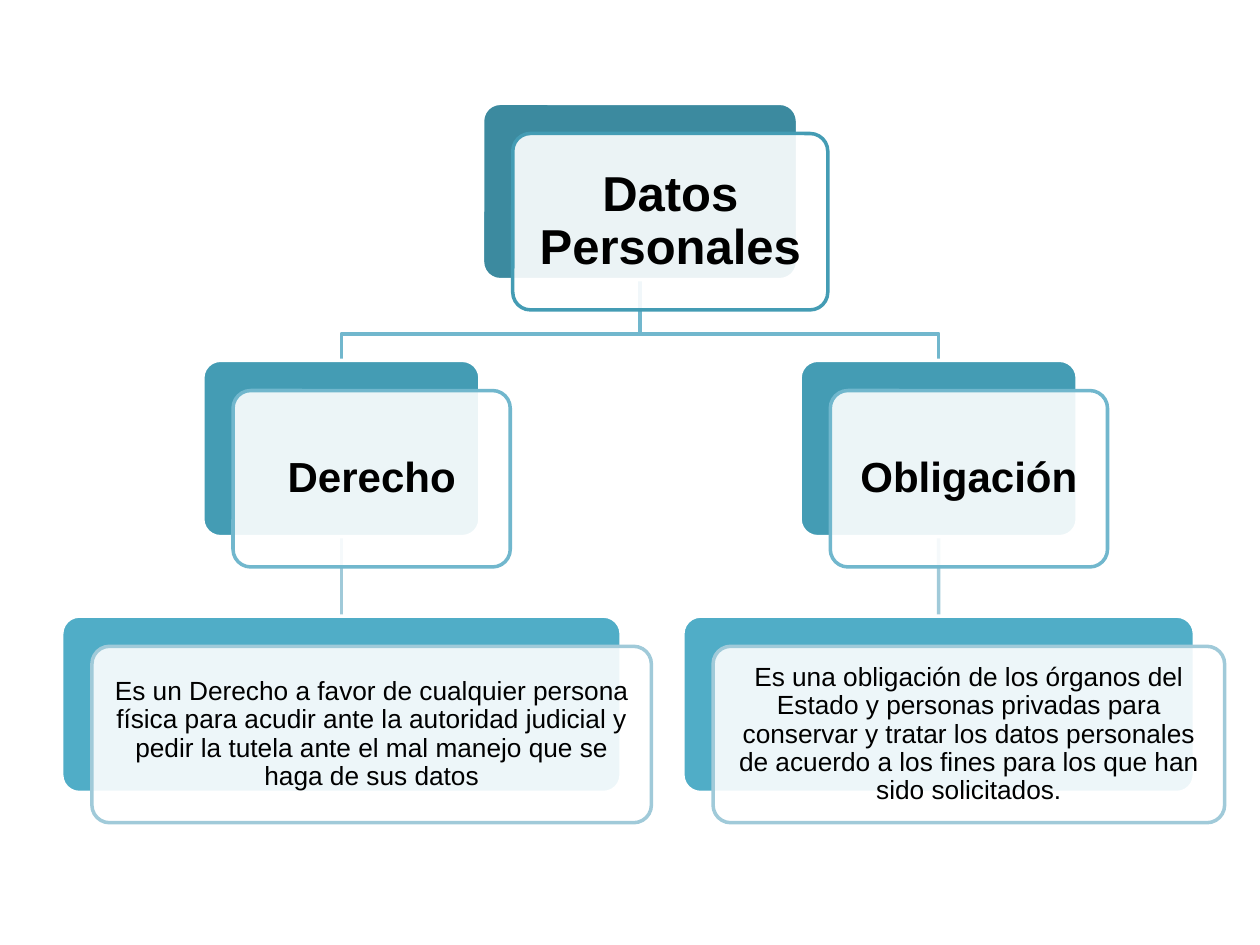
from lxml.etree import SubElement
from pptx import Presentation
from pptx.dml.color import RGBColor
from pptx.enum.shapes import MSO_CONNECTOR, MSO_SHAPE
from pptx.enum.text import MSO_ANCHOR, PP_ALIGN
from pptx.oxml.ns import qn
from pptx.util import Inches, Pt

THEME = {
    "font": "Arial",
    "text": "000000",
    "white": "FFFFFF",
    "line": 2,
    # per level: back fill, card border, type size, bold, text inset
    "levels": [
        ("3C8A9F", "449CB4", 28, True, 0.12),
        ("449CB4", "71B7CD", 24, True, 0.1),
        ("50ADC7", "A0CAD9", 15, False, 0.06),
    ],
}
TOPS = [0.82, 2.86, 4.89]
HIGH = 1.4
SHIFT = 0.24
ROOT_MID = 5.08
BEND = 2.65
BRANCHES = [
    (2.71, "Derecho", 4.44,
     "Es un Derecho a favor de cualquier persona física para acudir ante la "
     "autoridad judicial y pedir la tutela ante el mal manejo que se haga de "
     "sus datos"),
    (7.45, "Obligación", 4.06,
     "Es una obligación de los órganos del Estado y personas privadas para "
     "conservar y tratar los datos personales de acuerdo a los fines para los "
     "que han sido solicitados."),
]


def stroke(shape, color):
    shape.line.color.rgb = RGBColor.from_string(color)
    shape.line.width = Pt(THEME["line"])


def add_node(level, mid, width, text):
    """Draw a back plate with a shifted text card on it; return the plate."""
    fill, edge, size, bold, inset = THEME["levels"][level]
    pair = []
    for step, paint, border in ((0, fill, THEME["white"]),
                                (SHIFT, THEME["white"], edge)):
        box = slide.shapes.add_shape(
            MSO_SHAPE.ROUNDED_RECTANGLE,
            Inches(mid - width / 2 + step), Inches(TOPS[level] + step),
            Inches(width), Inches(HIGH))
        box.adjustments[0] = 0.1
        box.shadow.inherit = False
        box.fill.solid()
        box.fill.fore_color.rgb = RGBColor.from_string(paint)
        stroke(box, border)
        pair.append(box)
    plate, card = pair
    tint = card.fill._xPr.find(qn("a:solidFill"))[0]
    SubElement(tint, qn("a:alpha")).set("val", "90000")

    frame = card.text_frame
    frame.word_wrap = True
    frame.vertical_anchor = MSO_ANCHOR.MIDDLE
    frame.margin_left = frame.margin_right = Inches(inset)
    frame.margin_top = frame.margin_bottom = Inches(inset)
    para = frame.paragraphs[0]
    para.text = text
    para.alignment = PP_ALIGN.CENTER
    para.line_spacing = 0.9
    para.font.name = THEME["font"]
    para.font.size = Pt(size)
    para.font.bold = bold
    para.font.color.rgb = RGBColor.from_string(THEME["text"])
    return plate


deck = Presentation()
deck.slide_width = Inches(10)
deck.slide_height = Inches(7.5)
slide = deck.slides.add_slide(deck.slide_layouts[6])

# Lines come first so that they lie behind the cards
links = []
for mid, *_ in BRANCHES:
    link = slide.shapes.add_connector(
        MSO_CONNECTOR.STRAIGHT, Inches(mid), Inches(TOPS[1] + HIGH),
        Inches(mid), Inches(TOPS[2]))
    SubElement(link._element.spPr, qn("a:effectLst"))
    stroke(link, THEME["levels"][2][1])
    links.append(link)

    path = slide.shapes.build_freeform(Inches(ROOT_MID), Inches(TOPS[0] + HIGH))
    path.add_line_segments(
        [(Inches(x), Inches(y)) for x, y in
         ((ROOT_MID, BEND), (mid, BEND), (mid, TOPS[1]))], close=False)
    elbow = path.convert_to_shape()
    elbow.shadow.inherit = False
    elbow.fill.background()
    stroke(elbow, THEME["levels"][1][1])

add_node(0, ROOT_MID, 2.5, "Datos Personales ")
for link, (mid, head, width, text) in zip(links, BRANCHES):
    link.begin_connect(add_node(1, mid, 2.2, head), 2)
    link.end_connect(add_node(2, mid, width, text), 0)

deck.save("out.pptx")
